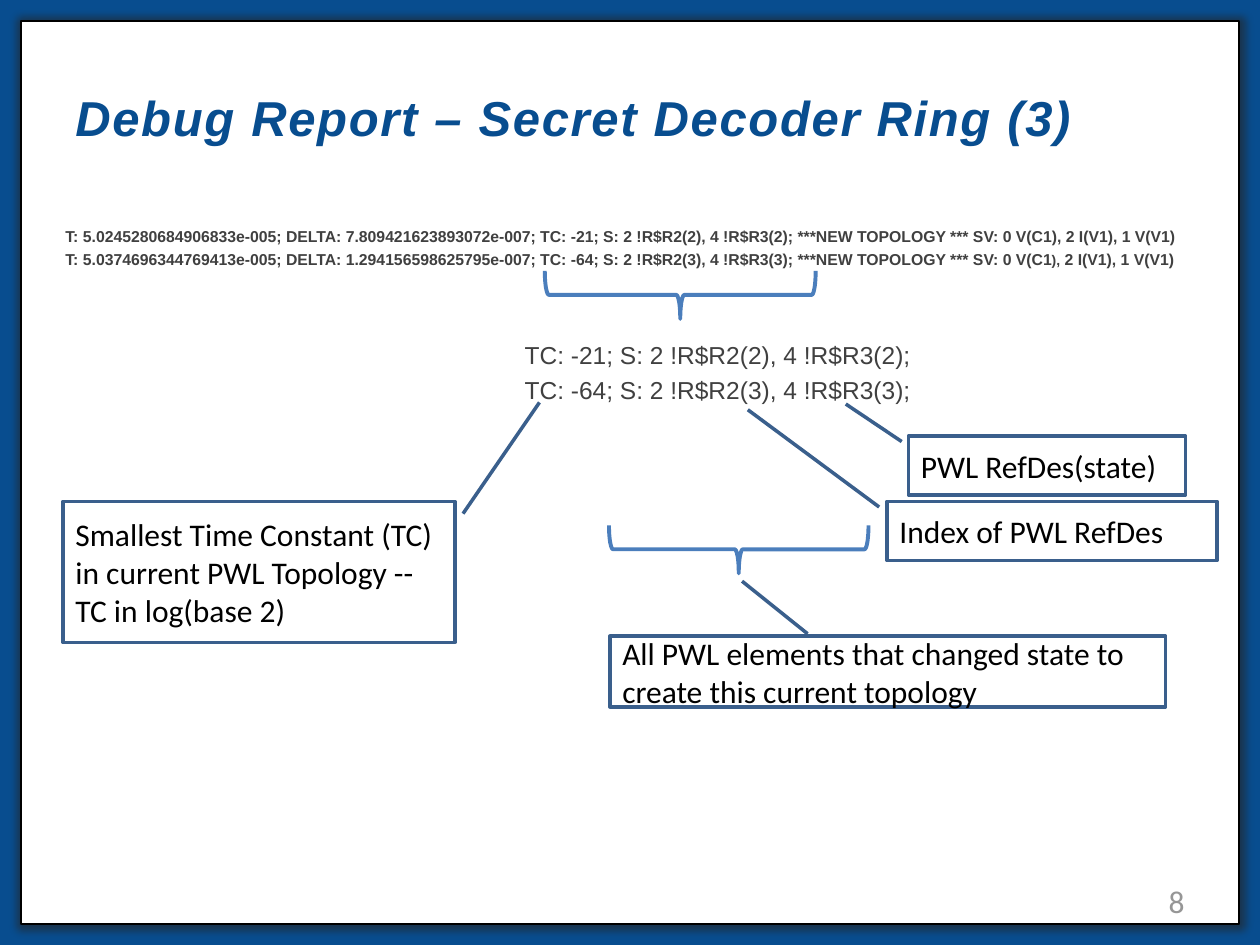
import pptx
import pptx.dml.color
import pptx.enum.shapes
import pptx.enum.text
import pptx.oxml
import pptx.util
from pptx.oxml.ns import nsdecls

Pt = pptx.util.Pt
SHAPES = pptx.enum.shapes.MSO_SHAPE
ALIGN = pptx.enum.text.PP_ALIGN
ANCHOR = pptx.enum.text.MSO_ANCHOR

COLORS = {
    "blue": "084D8F", "outline": "3A5F8C", "brace": "4B7EBC", "shade": "262626",
    "white": "FFFFFF", "black": "000000", "body": "404040", "number": "969696",
}


def color(name):
    return pptx.dml.color.RGBColor.from_string(COLORS[name])


def add_shape(page, kind, box, fill=None, line=None, line_width=2):
    shape = page.shapes.add_shape(kind, *(Pt(length) for length in box))
    shape.shadow.inherit = False
    if fill:
        shape.fill.solid()
        shape.fill.fore_color.rgb = color(fill)
    else:
        shape.fill.background()
    if line:
        shape.line.color.rgb = color(line)
        shape.line.width = Pt(line_width)
    else:
        shape.line.fill.background()
    return shape


def write_text(shape, paragraphs, size, ink, font="Arial", bold=False, italic=False,
               align=ALIGN.LEFT, anchor=ANCHOR.TOP, gap=0, spacing=0):
    """Fill a shape; each paragraph is a list of (text, size or None) spans."""
    frame = shape.text_frame
    frame.word_wrap = True
    frame.vertical_anchor = anchor
    for index, spans in enumerate(paragraphs):
        para = frame.paragraphs[0] if index == 0 else frame.add_paragraph()
        para.alignment = align
        para.space_before = Pt(gap if index else 0)
        for text, span_size in spans:
            span = para.add_run()
            span.text = text
            span.font.size = Pt(span_size or size)
            span.font.name = font
            span.font.bold = bold
            span.font.italic = italic
            span.font.color.rgb = color(ink)
            if spacing:
                span.font._element.set("spc", str(spacing * 100))


def add_text(page, box, lines, **style):
    shape = page.shapes.add_textbox(*(Pt(length) for length in box))
    paragraphs = [[(line, None)] if isinstance(line, str) else line for line in lines]
    write_text(shape, paragraphs, **style)


def add_frame(page, box):
    """Blue border, soft shade and white sheet, nested in the box."""
    left, top, width, height = box

    def inset(near, far):
        return left + near, top + near, width - near - far, height - near - far

    add_shape(page, SHAPES.RECTANGLE, box, fill="blue")
    shade = add_shape(page, SHAPES.RECTANGLE, inset(5, 2.2), fill="shade", line="outline")
    tint = shade.fill._xPr.find(".//" + pptx.oxml.ns.qn("a:srgbClr"))
    tint.append(pptx.oxml.parse_xml(f'<a:alpha {nsdecls("a")} val="60000"/>'))
    effects = shade._element.spPr.find(pptx.oxml.ns.qn("a:effectLst"))
    effects.append(pptx.oxml.parse_xml(f'<a:softEdge {nsdecls("a")} rad="63500"/>'))
    add_shape(page, SHAPES.RECTANGLE, inset(12, 12), fill="white", line="black",
              line_width=0.75)


def add_brace(page, box):
    """Place a brace that opens upwards and spans the box."""
    left, top, width, height = box
    upright = (left + (width - height) / 2, top + (height - width) / 2, height, width)
    brace = add_shape(page, SHAPES.RIGHT_BRACE, upright, line="brace", line_width=2.25)
    brace.rotation = 90


def add_callout(page, box, lines, start, end):
    """Place a callout; start and end are (x, y) shares of the box for its pointer."""
    callout = add_shape(page, SHAPES.LINE_CALLOUT_1, box, line="outline")
    for index, share in enumerate((start[1], start[0], end[1], end[0])):
        callout.adjustments[index] = share
    write_text(callout, [[(line, None)] for line in lines], size=18, ink="black",
               font="Calibri", anchor=ANCHOR.MIDDLE)


def add_report(page, box):
    """Two log lines with the decoded part enlarged below them."""
    left, top, width, _ = box
    log_lines = [
        "T: 5.0245280684906833e-005; DELTA: 7.809421623893072e-007; TC: -21; "
        "S: 2 !R$R2(2), 4 !R$R3(2); ***NEW TOPOLOGY *** SV: 0 V(C1), 2 I(V1), 1 V(V1)",
        [("T: 5.0374696344769413e-005; DELTA: 1.294156598625795e-007; TC: -64; "
          "S: 2 !R$R2(3), 4 !R$R3(3); ***NEW TOPOLOGY *** SV: 0 V(C1", None),
         ("),", 8), (" 2 I(V1), 1 V(V1)", None)],
    ]
    add_text(page, (left, top, width, 32), log_lines,
             size=9, ink="body", bold=True, gap=2.1)
    add_text(page, (left + 262.4, top + 65, 260, 44),
             ["TC: -21; S: 2 !R$R2(2), 4 !R$R3(2);", "TC: -64; S: 2 !R$R2(3), 4 !R$R3(3);"],
             size=14, ink="body", gap=3.2)
    add_brace(page, (left + 281, top + 28.8, 154.8, 27.4))


def add_explanations(page, box):
    left, top, _, _ = box
    right_edge = (-0.024, 0.097)
    add_callout(page, (left, top + 37.4, 223.9, 80.6),
                ["Smallest Time Constant (TC) in current PWL Topology --", "TC in log(base 2)"],
                start=(1.021, 0.087), end=(1.216, -0.702))
    add_callout(page, (left + 312.5, top + 114.5, 317.5, 40.3),
                ["All PWL elements that changed state to create this current topology"],
                start=(0.356, -0.035), end=(0.238, -0.781))
    add_brace(page, (left + 312, top + 51.1, 148.3, 27.4))
    add_callout(page, (left + 470.9, top + 37.4, 188.6, 33.8), ["Index of PWL RefDes"],
                start=right_edge, end=(-0.422, -1.549))
    add_callout(page, (left + 483.1, top, 158.4, 33.8), ["PWL RefDes(state)"],
                start=right_edge, end=(-0.226, -0.539))


def main():
    deck = pptx.Presentation()
    deck.slide_width, deck.slide_height = Pt(720), Pt(540)
    page = deck.slides.add_slide(deck.slide_layouts[6])
    add_frame(page, (0, 0, 720, 540))
    add_text(page, (516, 500.5, 168, 28.8), ["8"], size=18, ink="number",
             font="Calibri", align=ALIGN.RIGHT, anchor=ANCHOR.MIDDLE)
    add_text(page, (36, 21.6, 648, 90), ["Debug Report – Secret Decoder Ring (3)"],
             size=28, ink="blue", bold=True, italic=True, anchor=ANCHOR.MIDDLE, spacing=1)
    add_report(page, (30.3, 126, 665.3, 109))
    add_explanations(page, (36, 249.1, 659.5, 154.8))
    deck.save("out.pptx")


if __name__ == "__main__":
    main()
